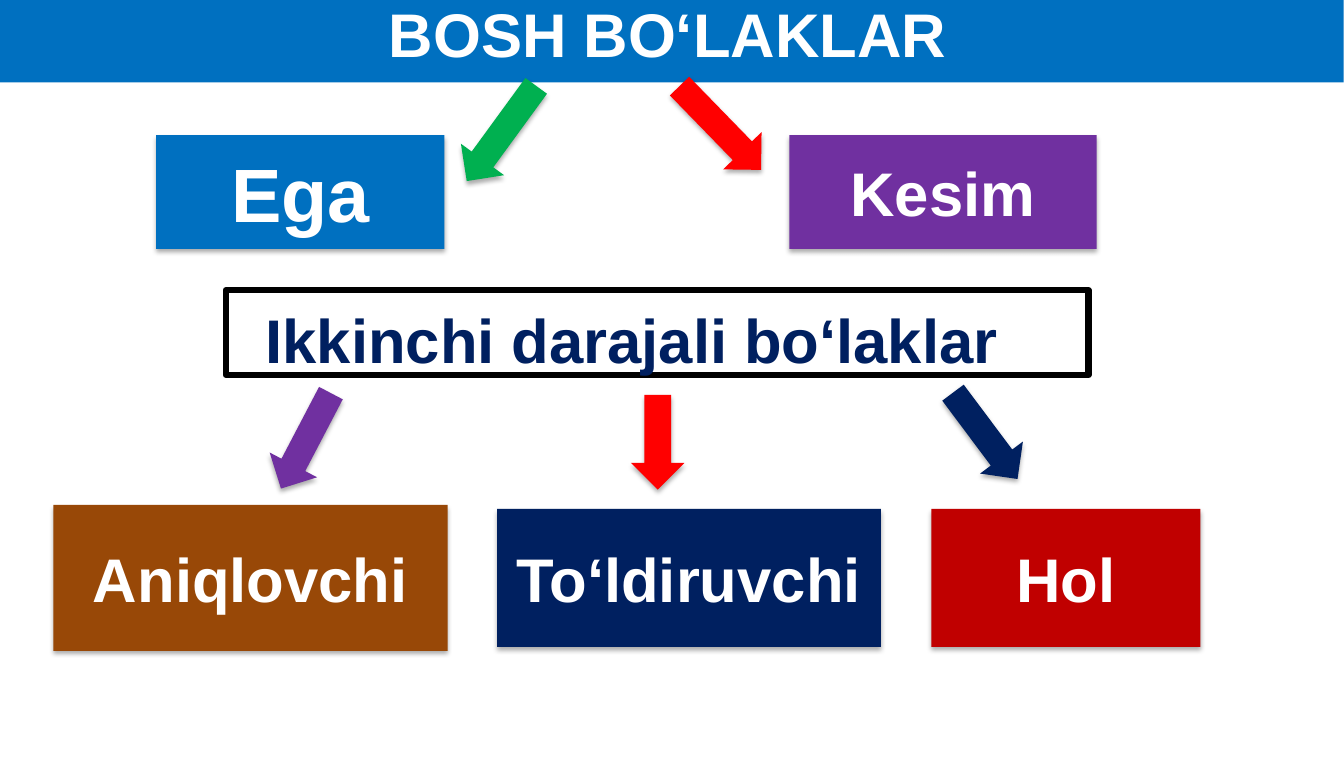
from dataclasses import dataclass

from lxml.etree import SubElement
from pptx import Presentation
from pptx.dml.color import RGBColor
from pptx.enum.shapes import MSO_SHAPE
from pptx.enum.text import MSO_ANCHOR, MSO_AUTO_SIZE, PP_ALIGN
from pptx.oxml.ns import qn
from pptx.util import Pt

FONT = "Arial"
WHITE, BLACK, NAVY = "FFFFFF", "000000", "002060"
BLUE, GREEN, RED = "0070C0", "00B050", "FF0000"
PURPLE, BROWN, CRIMSON = "7030A0", "984807", "C00000"
TEXT_SIZE = 44
ARROW_WIDTH = 38.2
TOP_ROW, TOP_HEIGHT = 96.5, 81.4
BOTTOM_ROW, BOTTOM_HEIGHT = 363.6, 98.6


@dataclass
class Part:
    """A sentence part in a coloured box."""
    text: str
    left: float
    top: float
    width: float
    height: float
    color: str
    size: float = TEXT_SIZE


@dataclass
class Arrow:
    """A block arrow from a heading to a sentence part."""
    left: float
    top: float
    width: float
    height: float
    rotation: float
    color: str
    kind: MSO_SHAPE = MSO_SHAPE.DOWN_ARROW


PARTS = [
    Part("Ega", 111.6, TOP_ROW, 205.9, TOP_HEIGHT, BLUE, 54),
    Part("Kesim", 563.8, TOP_ROW, 219.6, TOP_HEIGHT, PURPLE),
    Part("Aniqlovchi", 38.2, 360.7, 281.5, 104.4, BROWN),
    Part("To‘ldiruvchi", 355, BOTTOM_ROW, 274.3, BOTTOM_HEIGHT, NAVY),
    Part("Hol", 665.3, BOTTOM_ROW, 192.2, BOTTOM_HEIGHT, CRIMSON),
]
ARROWS = [
    Arrow(339.1, 53.3, ARROW_WIDTH, 84.2, 36.1, GREEN),
    Arrow(495.4, 49.7, ARROW_WIDTH, 83.5, 315.8, RED),
    Arrow(180, 295.9, 77, ARROW_WIDTH, 117.6, PURPLE, MSO_SHAPE.RIGHT_ARROW),
    Arrow(450.7, 282.2, ARROW_WIDTH, 67.7, 0, RED),
    Arrow(684.7, 272.9, ARROW_WIDTH, 77, 323.2, NAVY),
]


def rgb(color: str) -> RGBColor:
    return RGBColor.from_string(color)


def add_block(slide, kind: MSO_SHAPE, left: float, top: float,
              width: float, height: float, color: str):
    """Add a filled shape without outline or shadow."""
    block = slide.shapes.add_shape(kind, Pt(left), Pt(top), Pt(width), Pt(height))
    block.shadow.inherit = False
    block.fill.solid()
    block.fill.fore_color.rgb = rgb(color)
    block.line.fill.background()
    return block


def add_shadow(block) -> None:
    """Cast a soft shadow straight down."""
    effects = block.element.spPr.find(qn("a:effectLst"))
    shadow = SubElement(effects, qn("a:outerShdw"), blurRad=str(Pt(3.5)),
                        dist=str(Pt(2.2)), dir="5400000", rotWithShape="0")
    tint = SubElement(shadow, qn("a:srgbClr"), val=BLACK)
    SubElement(tint, qn("a:alpha"), val="32000")


def write(frame, text: str, color: str, size: float, align: PP_ALIGN,
          anchor: MSO_ANCHOR) -> None:
    frame.text = text
    frame.word_wrap = True
    frame.auto_size = MSO_AUTO_SIZE.NONE
    frame.vertical_anchor = anchor
    paragraph = frame.paragraphs[0]
    paragraph.alignment = align
    font = paragraph.font
    font.name, font.size, font.bold = FONT, Pt(size), True
    font.color.rgb = rgb(color)


def add_title(slide) -> None:
    band = add_block(slide, MSO_SHAPE.RECTANGLE, -1.4, -10.8, 961.2, 69.8, BLUE)
    title = slide.shapes.title
    band.element.addnext(title.element)
    title.left, title.top = Pt(-1.4), Pt(-6.5)
    title.width, title.height = Pt(956.9), Pt(54.7)
    frame = title.text_frame
    write(frame, "BOSH BO‘LAKLAR", WHITE, TEXT_SIZE, PP_ALIGN.CENTER, MSO_ANCHOR.TOP)
    frame.margin_left = frame.margin_right = frame.margin_bottom = 0
    frame.margin_top = Pt(3.5)
    frame.paragraphs[0].space_before = Pt(1.5)


def add_subheading(slide) -> None:
    box = add_block(slide, MSO_SHAPE.RECTANGLE, 161.3, 207.4, 616.3, 60.5, WHITE)
    box.fill.background()
    box.line.color.rgb = rgb(BLACK)
    box.line.width = Pt(4.5)
    frame = box.text_frame
    write(frame, "Ikkinchi darajali bo‘laklar", NAVY, TEXT_SIZE,
          PP_ALIGN.LEFT, MSO_ANCHOR.TOP)
    frame.margin_left, frame.margin_top, frame.margin_bottom = Pt(28.5), Pt(8.5), 0


def add_arrow(slide, arrow: Arrow) -> None:
    block = add_block(slide, arrow.kind, arrow.left, arrow.top,
                      arrow.width, arrow.height, arrow.color)
    block.rotation = arrow.rotation
    add_shadow(block)


def add_part(slide, part: Part) -> None:
    block = add_block(slide, MSO_SHAPE.RECTANGLE, part.left, part.top,
                      part.width, part.height, part.color)
    add_shadow(block)
    write(block.text_frame, part.text, WHITE, part.size,
          PP_ALIGN.CENTER, MSO_ANCHOR.MIDDLE)


def main() -> None:
    deck = Presentation()
    deck.slide_width, deck.slide_height = Pt(960), Pt(553)
    slide = deck.slides.add_slide(deck.slide_layouts[5])

    # Headings
    add_title(slide)
    add_subheading(slide)

    # Arrows and the parts they lead to
    for arrow in ARROWS:
        add_arrow(slide, arrow)
    for part in PARTS:
        add_part(slide, part)

    deck.save("out.pptx")


if __name__ == "__main__":
    main()
